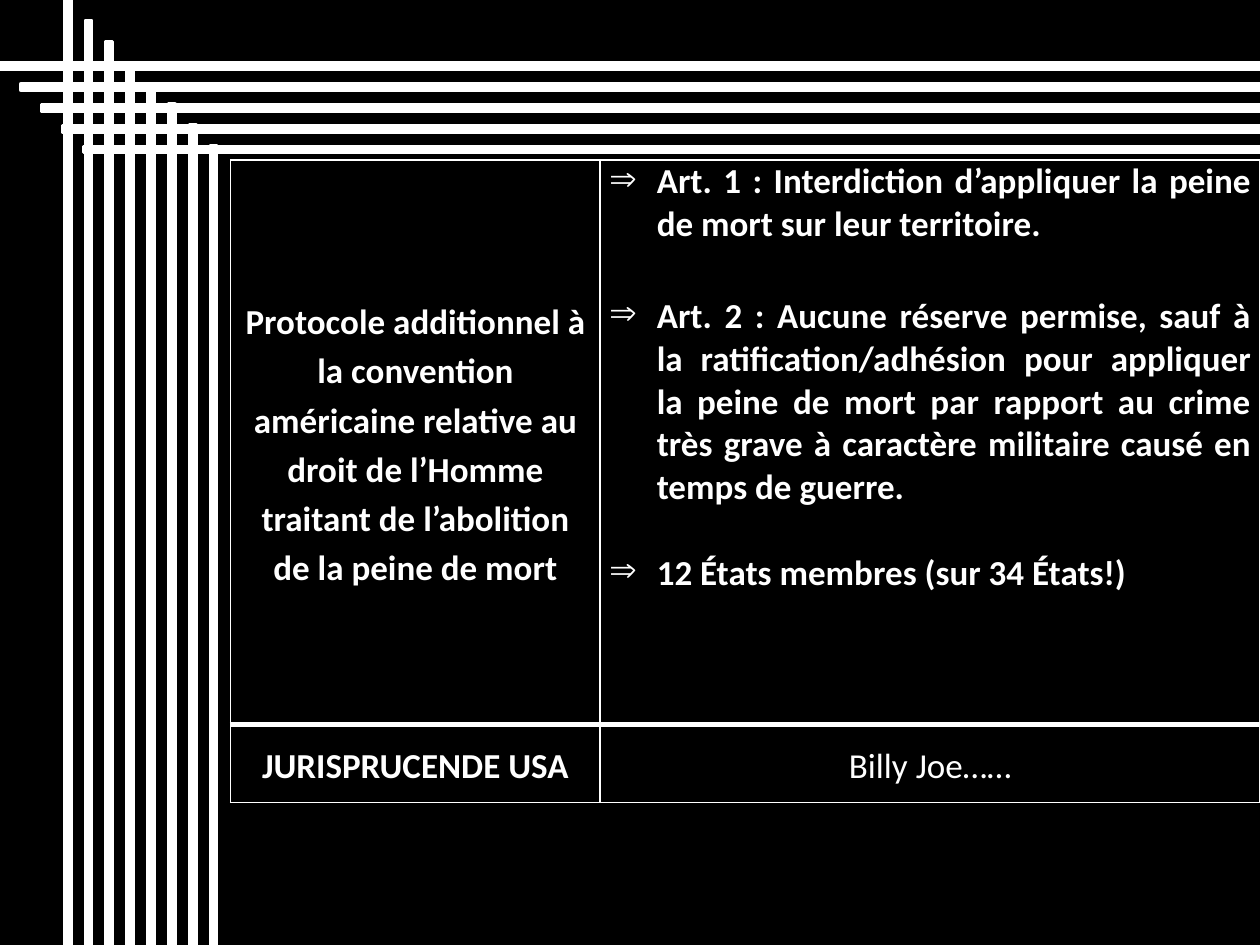
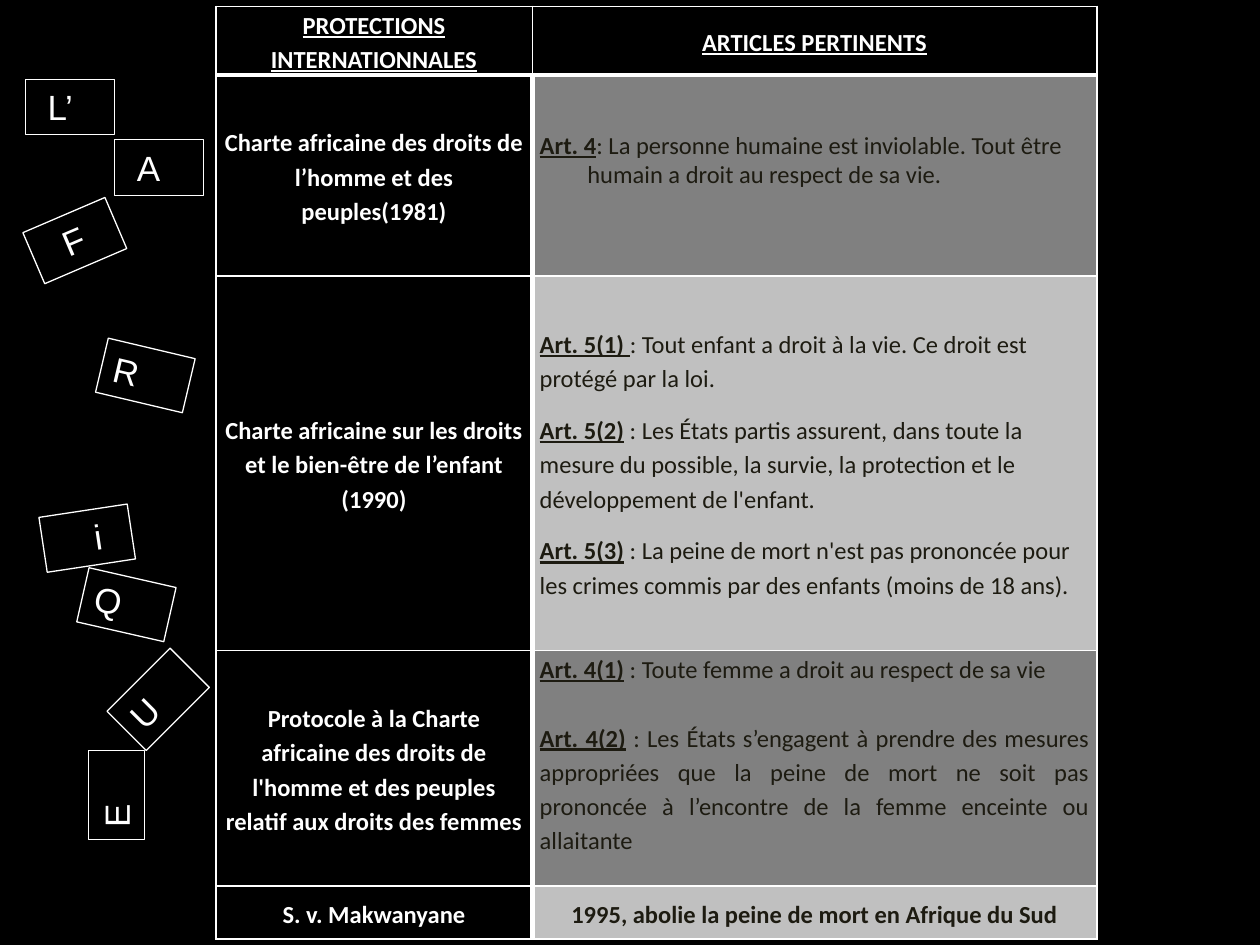
from pptx import Presentation
from pptx import util as u
from pptx.dml.color import RGBColor
from pptx.enum import shapes, text
from pptx.oxml import ns
from lxml import etree

WHITE = RGBColor(0xFF, 0xFF, 0xFF)
BLACK = RGBColor(0, 0, 0)
INK = RGBColor(0x1D, 0x1B, 0x11)
DARK = RGBColor(0x80, 0x80, 0x80)
LIGHT = RGBColor(0xC0, 0xC0, 0xC0)

LEFT, MID, JUST = text.PP_ALIGN.LEFT, text.PP_ALIGN.CENTER, text.PP_ALIGN.JUSTIFY
TOP, HALF = text.MSO_ANCHOR.TOP, text.MSO_ANCHOR.MIDDLE
THIN, THICK = 1, 3
STEP = 0.42


class Deck:
    def __init__(self):
        self.prs = Presentation()
        self.prs.slide_width = u.Cm(25.4)
        self.prs.slide_height = u.Cm(19.05)
        back = self.prs.slide_master.background.fill
        back.solid()
        back.fore_color.rgb = BLACK

    def page(self):
        self.slide = self.prs.slides.add_slide(self.prs.slide_layouts[6])

    def font(self, run, size, tint, bold=False, line=False, name="Calibri"):
        font = run.font
        font.name, font.size = name, u.Pt(size)
        font.bold, font.underline = bold, line
        font.color.rgb = tint

    def table(self, x, y, cols, rows):
        frame = self.slide.shapes.add_table(
            len(rows), len(cols), u.Cm(x), u.Cm(y), u.Cm(sum(cols)), u.Cm(sum(rows)))
        grid = frame.table
        grid.first_row = grid.horz_banding = False
        for col, wide in zip(grid.columns, cols):
            col.width = u.Cm(wide)
        for row, high in zip(grid.rows, rows):
            row.height = u.Cm(high)
        return grid

    def edges(self, cell, widths):
        props = cell._tc.get_or_add_tcPr()
        for side, wide in zip("LRTB", widths):
            line = etree.SubElement(props, ns.qn(f"a:ln{side}"), w=str(u.Pt(wide)))
            fill = etree.SubElement(line, ns.qn("a:solidFill"))
            etree.SubElement(fill, ns.qn("a:srgbClr"), val=str(WHITE))

    def cell(self, cell, widths, fill=None, anchor=HALF, side=0.15, foot=0):
        self.edges(cell, widths)
        if fill is None:
            cell.fill.background()
        else:
            cell.fill.solid()
            cell.fill.fore_color.rgb = fill
        cell.vertical_anchor = anchor
        cell.margin_left = cell.margin_right = u.Cm(side)
        cell.margin_top, cell.margin_bottom = 0, u.Cm(foot)
        return cell.text_frame

    def para(self, frame, words, size, tint=WHITE, bold=True, line=False,
             align=MID, lead=1.15, gap=0, hang=0, mark=None, rest=None):
        para = frame.paragraphs[0]
        if para.runs:
            para = frame.add_paragraph()
        para.text = words
        self.font(para.runs[0], size, tint, bold, line)
        if rest:
            run = para.add_run()
            run.text = rest
            self.font(run, size, tint)
        para.alignment, para.line_spacing = align, lead
        para.space_before = u.Pt(gap)
        props = para._p.get_or_add_pPr()
        if hang:
            props.set("marL", str(u.Cm(hang)))
            props.set("indent", str(-u.Cm(hang)))
        if mark:
            etree.SubElement(props, ns.qn("a:buChar"), char=mark)

    def box(self, x, y, wide, high, line):
        box = self.slide.shapes.add_shape(
            shapes.MSO_SHAPE.RECTANGLE, u.Cm(x), u.Cm(y), u.Cm(wide), u.Cm(high))
        box.shadow.inherit = False
        box.line.color.rgb = WHITE
        box.line.width = u.Pt(line)
        return box

    def bar(self, x, y, wide, high):
        bar = self.box(x, y, wide, high, 2)
        bar.fill.solid()
        bar.fill.fore_color.rgb = WHITE

    def tile(self, sign, x, y, turn, inset):
        tile = self.box(x, y, 1.8, 1.12, 0.75)
        tile.fill.background()
        tile.rotation = turn
        frame = tile.text_frame
        frame.text = sign
        frame.word_wrap = True
        frame.vertical_anchor = TOP
        frame.margin_left = u.Cm(inset)
        para = frame.paragraphs[0]
        para.alignment = LEFT
        self.font(para.runs[0], 20, WHITE, name="Arial")


def treaty(deck):
    deck.page()
    grid = deck.table(4.65, 3.23, [7.45, 13.3], [11.38, 1.57])
    upper = (THIN, THIN, THIN, THICK)
    lower = (THIN, THIN, THICK, THIN)
    frame = deck.cell(grid.cell(0, 0), upper, side=0.18)
    deck.para(frame, "Protocole additionnel à la convention américaine relative au droit de "
              "l’Homme traitant de l’abolition de la peine de mort", 20)
    frame = deck.cell(grid.cell(0, 1), upper, anchor=TOP, side=0.18)
    points = [
        ("Art. 1 : Interdiction d’appliquer la peine de mort sur leur territoire.", 0),
        ("Art. 2 : Aucune réserve permise, sauf à la ratification/adhésion pour appliquer "
         "la peine de mort par rapport au crime très grave à caractère militaire causé en "
         "temps de guerre.", 28),
        ("12 États membres (sur 34 États!)", 24.4),
    ]
    for words, gap in points:
        deck.para(frame, words, 20, align=JUST, lead=1.0, gap=gap, hang=0.96, mark="⇒")
    for col, words in enumerate(["JURISPRUCENDE USA", "Billy Joe……"]):
        frame = deck.cell(grid.cell(1, col), lower, side=0.18)
        deck.para(frame, words, 20, bold=col == 0)
    for i in range(8):
        deck.bar(1.3 + i * STEP, i * STEP, 0.13, 19.05)
    for i in range(5):
        deck.bar(i * STEP, 1.27 + i * STEP, 25.4, 0.13)


def africa(deck):
    deck.page()
    grid = deck.table(4.35, 0.13, [6.38, 11.38], [1.35, 4.05, 7.55, 4.75, 1.07])
    for col, words in enumerate(["PROTECTIONS INTERNATIONNALES", "ARTICLES PERTINENTS"]):
        frame = deck.cell(grid.cell(0, col), (THIN, THIN, THIN, THICK), BLACK)
        deck.para(frame, words, 14, line=True)

    names = [
        "Charte africaine des droits de l’homme et des peuples(1981)",
        "Charte africaine sur les droits et le bien-être de l’enfant (1990)",
        "Protocole à la Charte africaine des droits de l'homme et des peuples relatif aux "
        "droits des femmes",
        "S. v. Makwanyane",
    ]
    rules = [
        [("Art. 4", ": La personne humaine est inviolable. Tout être humain a droit au "
          "respect de sa vie.", dict(hang=0.96, lead=1.0))],
        [("Art. 5(1) ", ": Tout enfant a droit à la vie. Ce droit est protégé par la loi.", {}),
         ("Art. 5(2)", " : Les États partis assurent, dans toute la mesure du possible, la "
          "survie, la protection et le développement de l'enfant.", dict(gap=10)),
         ("Art. 5(3)", " : La peine de mort n'est pas prononcée pour les crimes commis par "
          "des enfants (moins de 18 ans).", dict(gap=10))],
        [("Art. 4(1)", " : Toute femme a droit au respect de sa vie", {}),
         ("Art. 4(2)", " : Les États s’engagent à prendre des mesures appropriées que la "
          "peine de mort ne soit pas prononcée à l’encontre de la femme enceinte ou "
          "allaitante", dict(gap=19.7, align=JUST))],
        [("1995, abolie la peine de mort en Afrique du Sud", None,
          dict(align=MID, line=False))],
    ]
    looks = [dict(foot=0.6), {}, dict(anchor=TOP), {}]
    for row, (name, arts, look) in enumerate(zip(names, rules, looks), 1):
        top = THICK if row == 1 else THIN
        frame = deck.cell(grid.cell(row, 0), (THIN, THICK, top, THIN), BLACK)
        deck.para(frame, name, 14)
        shade = DARK if row % 2 else LIGHT
        frame = deck.cell(grid.cell(row, 1), (THICK, THIN, top, THIN), shade, **look)
        for head, rest, style in arts:
            deck.para(frame, head, 14, INK, rest=rest,
                      **{"align": LEFT, "line": True, **style})

    tiles = [
        ("L’", 0.51, 1.6, 0, 0.45),
        ("R", 2.03, 7.01, 13.3, 0.25),
        ("A", 2.31, 2.82, 0, 0.45),
        ("F", 0.61, 4.29, 336.8, 0.65),
        ("i", 0.86, 10.29, 351.4, 1.04),
        ("Q", 1.65, 11.63, 12.8, 0.25),
        ("U", 2.29, 13.54, 315, 0.25),
        ("E", 1.45, 15.47, 270, 0.25),
    ]
    for tile in tiles:
        deck.tile(*tile)


def main():
    deck = Deck()
    treaty(deck)
    africa(deck)
    deck.prs.save("out.pptx")


if __name__ == "__main__":
    main()
